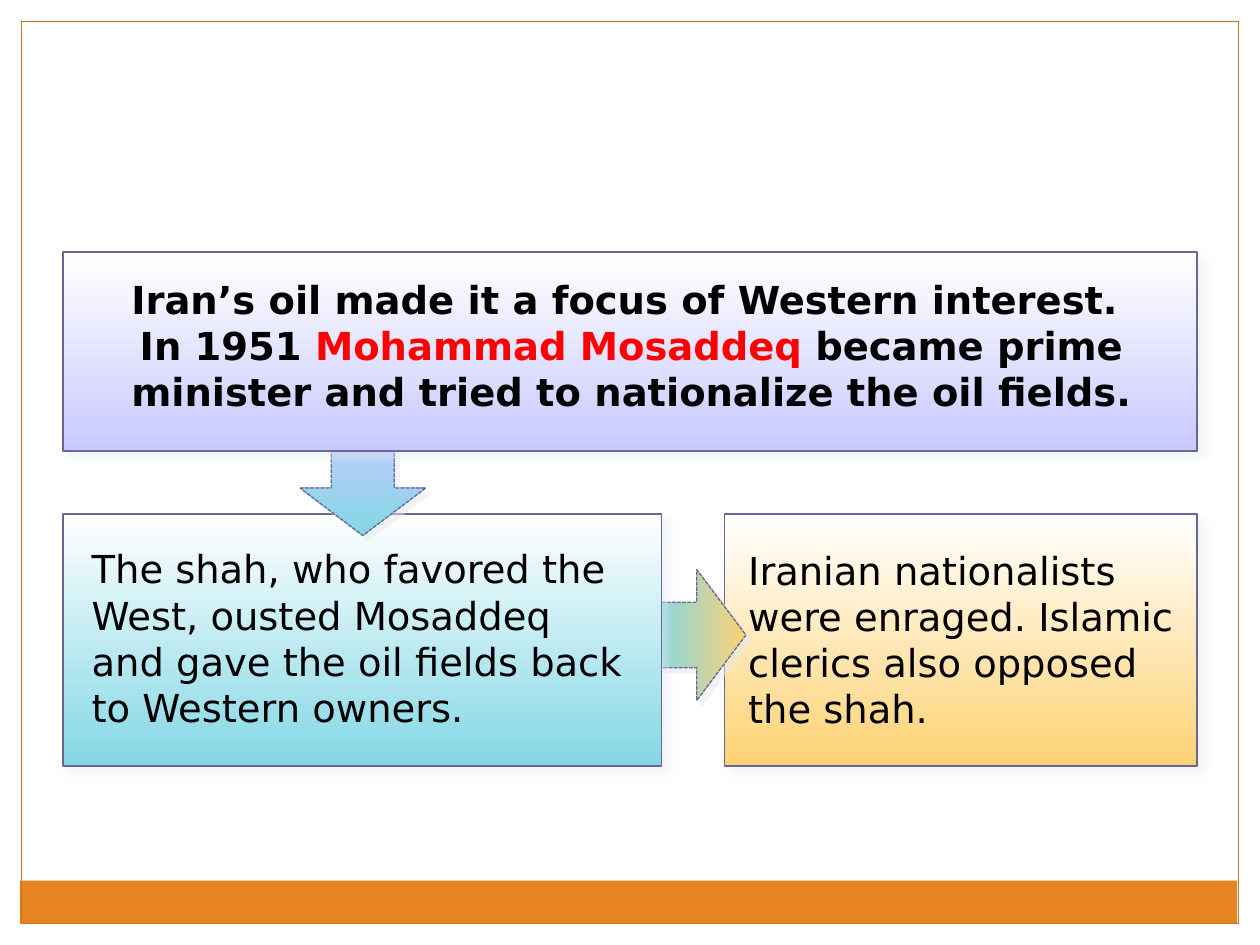
import pptx
import pptx.dml.color
import pptx.enum.dml
import pptx.enum.shapes
import pptx.enum.text
import pptx.oxml
import pptx.util
from dataclasses import dataclass

Inches = pptx.util.Inches
SHAPE = pptx.enum.shapes.MSO_SHAPE
ALIGN = pptx.enum.text.PP_ALIGN


@dataclass(frozen=True)
class Theme:
    white: str = "FFFFFF"
    black: str = "000000"
    red: str = "FF0000"
    orange: str = "E68422"
    frame: str = "CB741E"
    outline: str = "666699"
    shadow: str = "E4E9EF"
    lavender: str = "C9C9FF"
    aqua: str = "83D7E5"
    amber: str = "FED273"
    font: str = "DejaVu Sans"
    size: float = 22
    box_line: float = 1
    thin_line: float = 0.75


def rgb(value):
    return pptx.dml.color.RGBColor.from_string(value)


def write_text(text_frame, parts, *, theme, bold=False, align=ALIGN.LEFT):
    """Write (text, colour) parts into one paragraph; a newline is a line break."""
    paragraph = text_frame.paragraphs[0]
    paragraph.alignment = align
    for text, color in parts:
        for index, line in enumerate(text.split("\n")):
            if index:
                paragraph.add_line_break()
            run = paragraph.add_run()
            run.text = line
            run.font.name = theme.font
            run.font.size = pptx.util.Pt(theme.size)
            run.font.bold = bold
            run.font.color.rgb = rgb(color)


class SlideBuilder:
    def __init__(self, slide, theme):
        self.slide = slide
        self.theme = theme

    def shape(self, kind, bounds, fill=None, line=None, width=None, parent=None):
        shapes = (parent or self.slide).shapes
        shape = shapes.add_shape(kind, *map(Inches, bounds))
        shape.shadow.inherit = False
        if fill:
            shape.fill.solid()
            shape.fill.fore_color.rgb = rgb(fill)
        else:
            shape.fill.background()
        if line:
            shape.line.color.rgb = rgb(line)
            shape.line.width = pptx.util.Pt(width)
        else:
            shape.line.fill.background()
        return shape

    def gradient(self, shape, start, end, clockwise):
        shape.fill.gradient()
        shape.fill.gradient_angle = (360 - clockwise) % 360
        for stop, color in zip(shape.fill.gradient_stops, (start, end)):
            stop.color.rgb = rgb(color)

    def shadow(self, shape, blur):
        """Add a soft shadow, in points, falling to the lower right."""
        effects = shape._element.spPr.find(pptx.oxml.ns.qn("a:effectLst"))
        effects.append(pptx.oxml.parse_xml(
            f'<a:outerShdw {pptx.oxml.ns.nsdecls("a")} blurRad="{pptx.util.Pt(blur)}" '
            f'dist="{pptx.util.Pt(4.2)}" dir="2700000" algn="tl" rotWithShape="0">'
            f'<a:srgbClr val="{self.theme.shadow}"><a:alpha val="50000"/></a:srgbClr>'
            "</a:outerShdw>"))

    def card(self, bounds, color, text_bounds, parts, **text_format):
        """Group a shaded rectangle with its text."""
        group = self.slide.shapes.add_group_shape()
        box = self.shape(SHAPE.RECTANGLE, bounds, line=self.theme.outline,
                         width=self.theme.box_line, parent=group)
        self.gradient(box, self.theme.white, color, 90)
        self.shadow(box, 5)
        text_box = group.shapes.add_textbox(*map(Inches, text_bounds))
        text_box.text_frame.word_wrap = True
        text_box.text_frame.auto_size = pptx.enum.text.MSO_AUTO_SIZE.SHAPE_TO_FIT_TEXT
        write_text(text_box.text_frame, parts, theme=self.theme, **text_format)

    def block_arrow(self, kind, bounds, start, end, clockwise, head):
        arrow = self.shape(kind, bounds, line=self.theme.outline,
                           width=self.theme.thin_line)
        arrow.adjustments[0] = 0.5
        arrow.adjustments[1] = head
        arrow.line.dash_style = pptx.enum.dml.MSO_LINE.SQUARE_DOT
        self.gradient(arrow, start, end, clockwise)
        self.shadow(arrow, 0)

    def frame(self):
        margin, width, height = 0.17, 10, 7.5
        for bounds in ((0, 0, width, margin),
                       (width - margin, 0, margin, height),
                       (0, 0, margin, height)):
            self.shape(SHAPE.RECTANGLE, bounds, fill=self.theme.white)
        self.shape(SHAPE.RECTANGLE, (0.16, 6.99, 9.66, 0.34), fill=self.theme.orange)
        self.shape(SHAPE.RECTANGLE,
                   (margin, margin, width - 2 * margin, height - 2 * margin),
                   line=self.theme.frame, width=self.theme.thin_line)


def main():
    theme = Theme()
    presentation = pptx.Presentation()
    presentation.slide_width = Inches(10)
    presentation.slide_height = Inches(7.5)
    slide = presentation.slides.add_slide(presentation.slide_layouts[6])
    builder = SlideBuilder(slide, theme)

    builder.frame()
    builder.card(
        (5.75, 4.08, 3.75, 2), theme.amber, (5.84, 4.29, 3.57, 1.57),
        [("Iranian nationalists were enraged. Islamic clerics also "
          "opposed the shah.", theme.black)])
    builder.block_arrow(SHAPE.RIGHT_ARROW, (5.21, 4.52, 0.71, 1.04),
                        theme.aqua, theme.amber, 0, 0.55)
    builder.card(
        (0.5, 4.08, 4.75, 2), theme.aqua, (0.63, 4.28, 4.5, 1.57),
        [("The shah, who favored the West, ousted Mosaddeq and gave the "
          "oil fields back to Western owners.", theme.black)])
    builder.block_arrow(SHAPE.DOWN_ARROW, (2.38, 3.33, 1, 0.92),
                        theme.lavender, theme.aqua, 90, 0.41)
    builder.card(
        (0.5, 2, 9, 1.58), theme.lavender, (0.62, 2.14, 8.78, 1.2),
        [("Iran’s oil made it a focus of Western interest. \nIn 1951 ", theme.black),
         ("Mohammad Mosaddeq", theme.red),
         (" became prime minister and tried to nationalize the oil fields.",
          theme.black)],
        bold=True, align=ALIGN.CENTER)

    presentation.save("out.pptx")


if __name__ == "__main__":
    main()
